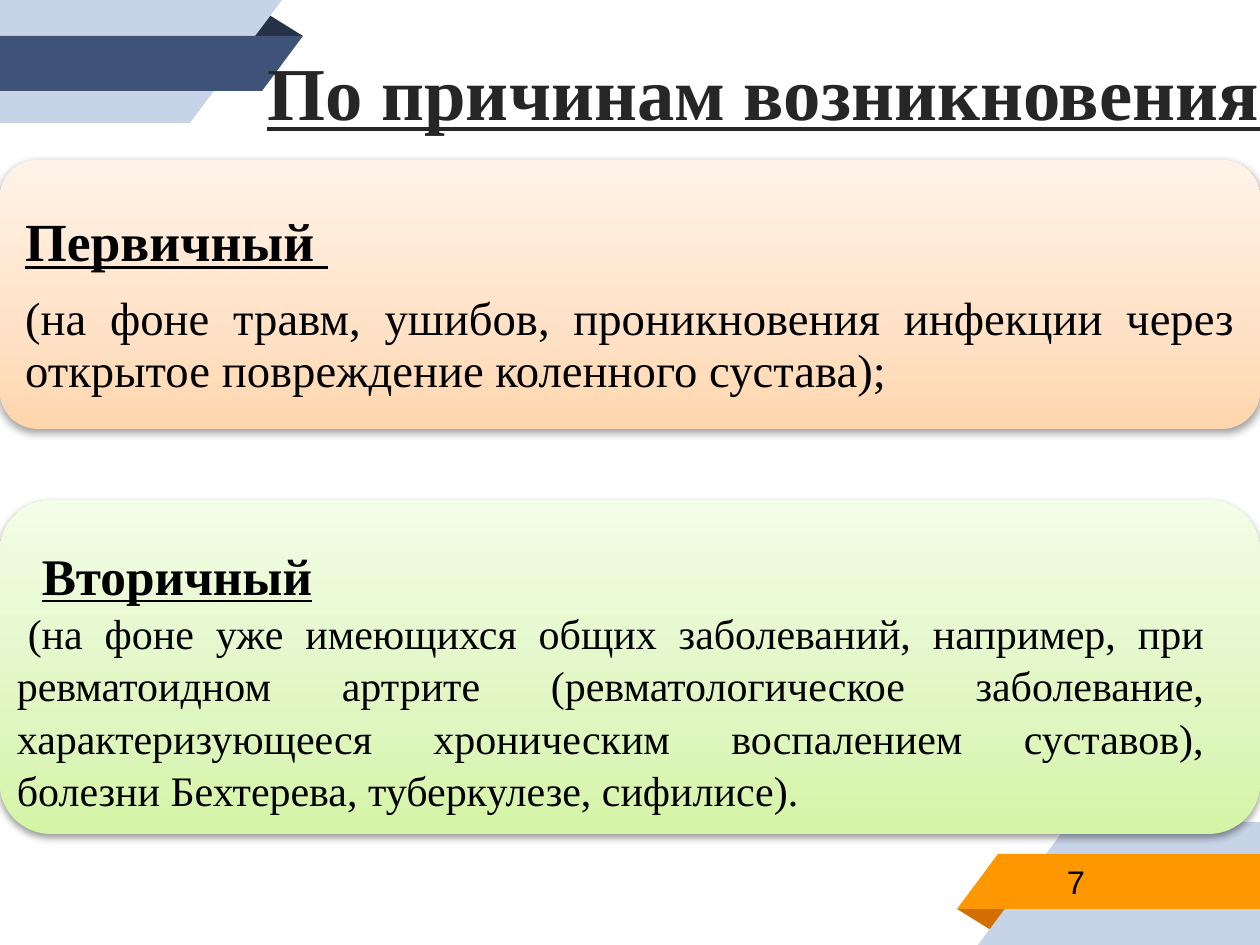
from lxml.etree import SubElement
from pptx import Presentation
from pptx.dml.color import RGBColor
from pptx.enum.shapes import MSO_SHAPE
from pptx.enum.text import MSO_ANCHOR, PP_ALIGN
from pptx.oxml.ns import qn
from pptx.util import Pt

PX = 914400 / 168
WIDTH, HEIGHT = 1260, 945
SERIF, SANS = "Times New Roman", "Arial"
COLORS = {
    "pale": "C7D3E6",
    "navy": "3F5378",
    "navy_fold": "263248",
    "orange": "FF9800",
    "orange_fold": "D26F00",
    "title": "262626",
    "text": "000000",
}
PEACH = [(0, "FFD6AD"), (35, "FFE1C5"), (100, "FFF3E9")]
GREEN = [(0, "D5F4A6"), (35, "E0F6C1"), (100, "F3FDE7")]
RIBBON_FOLD = [(249, 36), (266, 13), (303, 36)]
RIBBON_BACK = [(0, 0), (282, 0), (190, 123), (0, 123)]
RIBBON_BAND = [(0, 36), (303, 36), (262, 91), (0, 91)]


def emu(px):
    return round(px * PX)


def set_margins(frame, left, top, right, bottom):
    frame.margin_left, frame.margin_top = emu(left), emu(top)
    frame.margin_right, frame.margin_bottom = emu(right), emu(bottom)


def write(paragraph, text, size, font=SERIF, color="text", heading=False,
          align=PP_ALIGN.LEFT, spacing=1.0, after=0, indent=0):
    paragraph.text = text
    paragraph.alignment = align
    paragraph.line_spacing = spacing
    paragraph.space_after = Pt(after)
    paragraph.font.name = font
    paragraph.font.size = Pt(size)
    paragraph.font.bold = heading
    paragraph.font.underline = heading
    paragraph.font.color.rgb = RGBColor.from_string(COLORS[color])
    if indent:
        paragraph._p.get_or_add_pPr().set("indent", str(emu(indent)))


def add_ribbon(slide, band, fold, turned=False):
    parts = [(RIBBON_FOLD, fold), (RIBBON_BACK, "pale"), (RIBBON_BAND, band)]
    for points, color in parts:
        if turned:
            points = [(WIDTH - x, HEIGHT - y) for x, y in points]
        builder = slide.shapes.build_freeform(*points[0], scale=PX)
        builder.add_line_segments(points[1:], close=True)
        piece = builder.convert_to_shape()
        piece.shadow.inherit = False
        piece.fill.solid()
        piece.fill.fore_color.rgb = RGBColor.from_string(COLORS[color])
        piece.line.fill.background()


def add_label(slide, box, margins, anchor, text, size, **style):
    frame = slide.shapes.add_textbox(*map(emu, box)).text_frame
    frame.word_wrap = True
    frame.vertical_anchor = anchor
    set_margins(frame, *margins)
    write(frame.paragraphs[0], text, size, **style)


def paint_gradient(card, stops):
    card.fill.gradient()
    card.fill.gradient_angle = 90
    stop_list = card._element.spPr.find(".//" + qn("a:gsLst"))
    stop_list.clear()
    for position, color in stops:
        stop = SubElement(stop_list, qn("a:gs"), pos=str(position * 1000))
        SubElement(stop, qn("a:srgbClr"), val=color)


def cast_shadow(card):
    card.shadow.inherit = False
    effects = card._element.spPr.find(qn("a:effectLst"))
    shadow = SubElement(effects, qn("a:outerShdw"), blurRad=str(Pt(3.1)),
                        dist=str(Pt(1.6)), dir="5400000", rotWithShape="0")
    black = SubElement(shadow, qn("a:srgbClr"), val="000000")
    SubElement(black, qn("a:alpha"), val="38000")


def add_card(slide, box, radius, stops, margins, heading, body):
    card = slide.shapes.add_shape(MSO_SHAPE.ROUNDED_RECTANGLE, *map(emu, box))
    card.adjustments[0] = radius / box[3]
    card.line.fill.background()
    paint_gradient(card, stops)
    cast_shadow(card)
    frame = card.text_frame
    frame.word_wrap = True
    frame.vertical_anchor = MSO_ANCHOR.TOP
    set_margins(frame, *margins)
    write(frame.paragraphs[0], heading=True, **heading)
    write(frame.add_paragraph(), align=PP_ALIGN.JUSTIFY, **body)


def build_slide(prs):
    slide = prs.slides.add_slide(prs.slide_layouts[6])
    add_ribbon(slide, "orange", "orange_fold", turned=True)
    add_ribbon(slide, "navy", "navy_fold")
    add_label(slide, (1050, 852, 205, 59), (17, 17, 17, 17),
              MSO_ANCHOR.MIDDLE, "7", 14, font=SANS)
    add_label(slide, (240, 38, 1047, 108), (17, 8, 17, 8),
              MSO_ANCHOR.TOP, "По причинам возникновения", 32,
              color="title", heading=True, align=PP_ALIGN.CENTER)
    add_card(
        slide, (0, 160, WIDTH, 269), 38, PEACH, (14, 44, 14, 0),
        dict(text="Первичный ", size=23, spacing=0.9, after=9),
        dict(text="(на фоне травм, ушибов, проникновения инфекции через "
                  "открытое повреждение коленного сустава);",
             size=20, spacing=0.93))
    add_card(
        slide, (0, 500, WIDTH, 334), 51, GREEN, (2, 29, 40, 0),
        dict(text="Вторичный", size=22, indent=25),
        dict(text="(на фоне уже имеющихся общих заболеваний, например, при "
                  "ревматоидном артрите (ревматологическое заболевание, "
                  "характеризующееся хроническим воспалением суставов), "
                  "болезни Бехтерева, туберкулезе, сифилисе).",
             size=18, spacing=1.04, indent=11))


def main():
    prs = Presentation()
    prs.slide_width, prs.slide_height = emu(WIDTH), emu(HEIGHT)
    build_slide(prs)
    prs.save("out.pptx")


if __name__ == "__main__":
    main()
